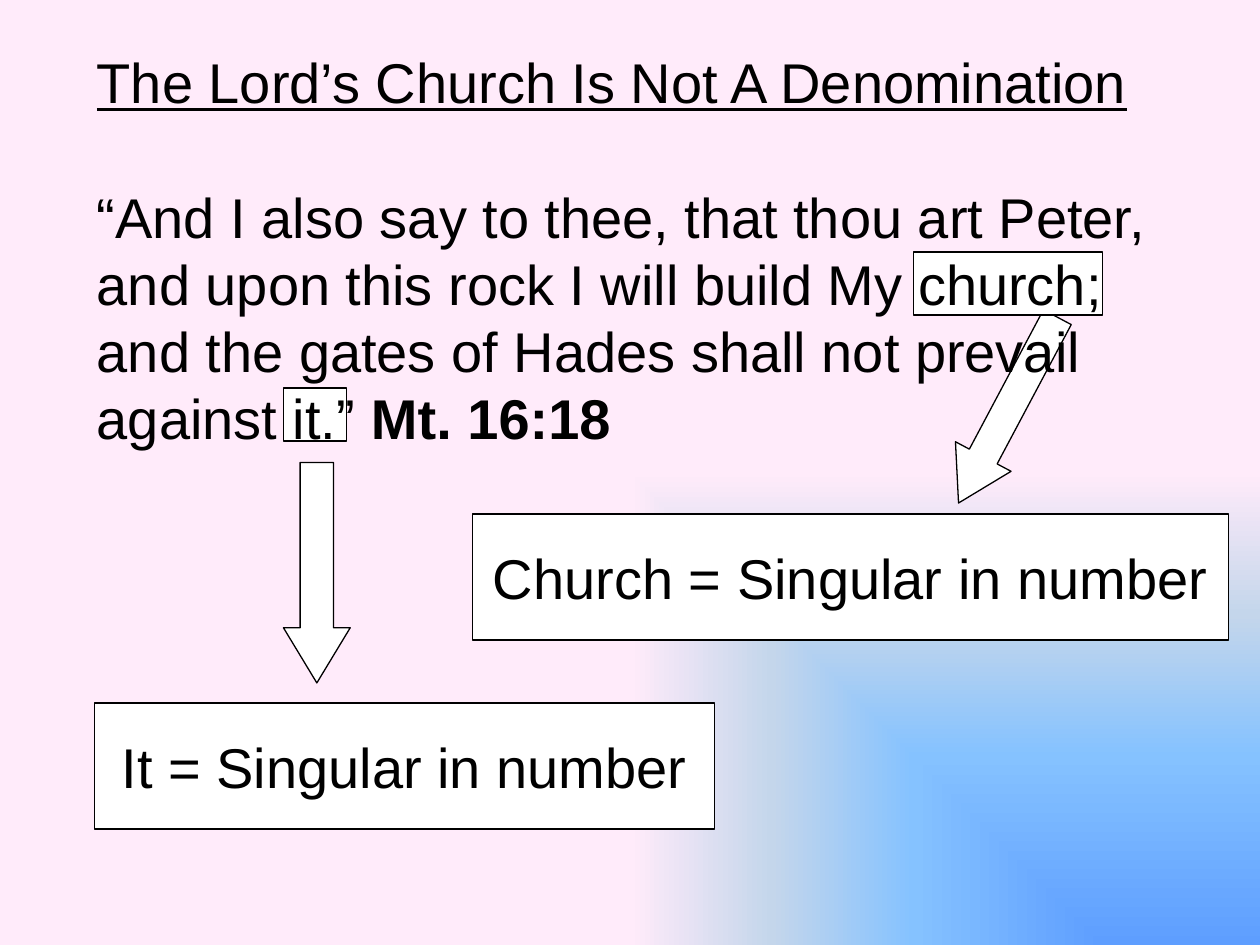
from pptx import Presentation
from pptx.dml.color import RGBColor
from pptx.enum import shapes, text
from pptx.oxml import parse_xml
from pptx.oxml.ns import nsdecls
from pptx.util import Inches, Pt

FONT, SIZE, LINE_PITCH = "Arial", 32, 38.4
INK, PAPER = "000000", "FFFFFF"
GLOW = [(0, "5E9EFF"), (40, "85C2FF"), (70, "C4D6EB"), (100, "FFEBFA")]

TITLE = "The Lord’s Church Is Not A Denomination"
VERSE = ("“And I also say to thee, that thou art Peter, and upon this rock "
         "I will build My church; and the gates of Hades shall not prevail "
         "against it.”")
REFERENCE = " Mt. 16:18"

# left, top, width, height in inches
CHURCH_ARROW = (7.75, 2.42, 0.5, 1.67)
CHURCH_NOTE = (3.75, 4.08, 6, 1)
WORD_MARKS = [(2.25, 3.08, 0.5, 0.42), (7.25, 2, 1.5, 0.5)]
PASSAGE = (0.67, 0.33, 8.58, 3.33)
IT_ARROW = (2.25, 3.67, 0.53, 1.75)
IT_NOTE = (0.75, 5.58, 4.92, 1)


def color(value):
    return RGBColor.from_string(value)


def add_span(para, words, bold=False, underline=False):
    span = para.add_run()
    span.text = words
    font = span.font
    font.name, font.size = FONT, Pt(SIZE)
    font.bold, font.underline = bold, underline
    font.color.rgb = color(INK)


def add_outlined(parent, kind, place):
    """Add a white shape with a thin black outline."""
    shape = parent.add_shape(kind, *map(Inches, place))
    shape.shadow.inherit = False
    shape.fill.solid()
    shape.fill.fore_color.rgb = color(PAPER)
    shape.line.color.rgb = color(INK)
    shape.line.width = Pt(0.75)
    return shape


def add_box(parent, place):
    return add_outlined(parent, shapes.MSO_SHAPE.RECTANGLE, place)


def add_note(parent, place, words):
    frame = add_box(parent, place).text_frame
    frame.word_wrap = False
    frame.vertical_anchor = text.MSO_ANCHOR.MIDDLE
    para = frame.paragraphs[0]
    para.alignment = text.PP_ALIGN.CENTER
    add_span(para, words)


def add_arrow(parent, place, head_start, rotation=0):
    arrow = add_outlined(parent, shapes.MSO_SHAPE.DOWN_ARROW, place)
    width, height = place[2:]
    arrow.adjustments[0] = 0.5
    arrow.adjustments[1] = (1 - head_start) * height / width
    arrow.rotation = rotation


def add_passage(parent):
    frame = parent.add_textbox(*map(Inches, PASSAGE)).text_frame
    frame.word_wrap = True
    title, verse = frame.paragraphs[0], frame.add_paragraph()
    for para in (title, verse):
        para.line_spacing = Pt(LINE_PITCH)
    verse.space_before = Pt(LINE_PITCH)
    add_span(title, TITLE, underline=True)
    add_span(verse, VERSE)
    add_span(verse, REFERENCE, bold=True)


def set_corner_glow(page):
    """Fill the background with a gradient spreading from the bottom right."""
    stops = "".join(
        f'<a:gs pos="{share * 1000}"><a:srgbClr val="{value}"/></a:gs>'
        for share, value in GLOW)
    background = parse_xml(
        f'<p:bg {nsdecls("p", "a")}><p:bgPr><a:gradFill rotWithShape="0">'
        f'<a:gsLst>{stops}</a:gsLst><a:path path="rect">'
        '<a:fillToRect l="100000" t="100000"/></a:path></a:gradFill>'
        '<a:effectLst/></p:bgPr></p:bg>')
    page.element.cSld.insert(0, background)


def main():
    deck = Presentation()
    deck.slide_width, deck.slide_height = Inches(10), Inches(7.5)
    page = deck.slides.add_slide(deck.slide_layouts[6])
    set_corner_glow(page)

    church = page.shapes.add_group_shape().shapes
    add_arrow(church, CHURCH_ARROW, head_start=0.75, rotation=28)
    add_note(church, CHURCH_NOTE, "Church = Singular in number")
    for place in WORD_MARKS:
        add_box(page.shapes, place)
    add_passage(page.shapes)
    add_arrow(page.shapes, IT_ARROW, head_start=0.75)
    add_note(page.shapes, IT_NOTE, "It = Singular in number")
    deck.save("out.pptx")


if __name__ == "__main__":
    main()
